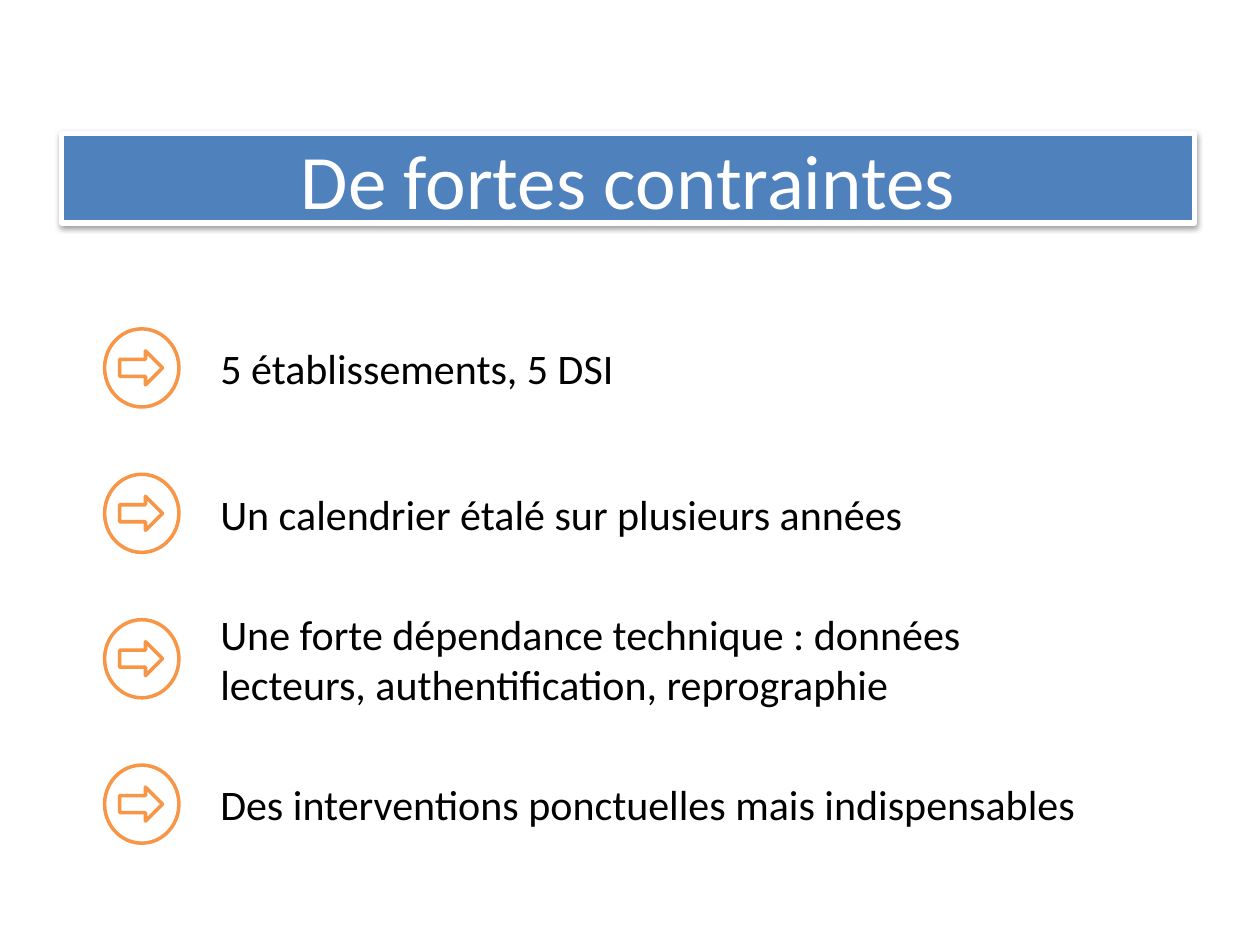
import pptx
import pptx.util
import pptx.dml.color
import pptx.enum.shapes
import pptx.enum.text
import pptx.oxml
import pptx.oxml.ns

COLORS = {"banner": "4F81BD", "accent": "F79646", "paper": "FFFFFF", "ink": "000000"}
SHAPES = pptx.enum.shapes.MSO_SHAPE
ALIGN = pptx.enum.text.PP_ALIGN

deck = pptx.Presentation()
deck.slide_width = pptx.util.Inches(10)
deck.slide_height = pptx.util.Inches(7.5)
slide = deck.slides.add_slide(deck.slide_layouts[6])

# Grid of 100 columns by 75 rows
COLUMN = deck.slide_width / 100
ROW = deck.slide_height / 75


def cells(left, top, width, height):
    return [round(n * unit) for n, unit in
            zip((left, top, width, height), (COLUMN, ROW, COLUMN, ROW))]


def write(part, text, size, color, align, wrap=True):
    frame = part.text_frame
    frame.word_wrap = wrap
    frame.vertical_anchor = pptx.enum.text.MSO_ANCHOR.MIDDLE
    paragraph = frame.paragraphs[0]
    paragraph.alignment = align
    run = paragraph.add_run()
    run.text = text
    for name, value in {"name": "Calibri", "size": pptx.util.Pt(size)}.items():
        setattr(run.font, name, value)
    run.font.color.rgb = pptx.dml.color.RGBColor.from_string(COLORS[color])


# Title banner with a soft shadow below
banner = slide.shapes.add_shape(SHAPES.RECTANGLE, *cells(4.9, 10.6, 89.9, 7.1))
banner.fill.solid()
banner.fill.fore_color.rgb = pptx.dml.color.RGBColor.from_string(COLORS["banner"])
banner.line.color.rgb = pptx.dml.color.RGBColor.from_string(COLORS["paper"])
banner.line.width = pptx.util.Pt(3)
banner._element.spPr.append(pptx.oxml.parse_xml(
    f'<a:effectLst {pptx.oxml.ns.nsdecls("a")}>'
    '<a:outerShdw blurRad="40000" dist="20000" dir="5400000" rotWithShape="0">'
    '<a:srgbClr val="000000"><a:alpha val="38000"/></a:srgbClr>'
    '</a:outerShdw></a:effectLst>'))
write(banner, "De fortes contraintes", 44, "paper", ALIGN.CENTER)

# Constraints: text, text width, text height, wrap
constraints = [
    ("5 établissements, 5 DSI", 33.5, 5, False),
    ("Un calendrier étalé sur plusieurs années", 74, 5, True),
    ("Une forte dépendance technique : données lecteurs, authentification, reprographie",
     72.1, 9.1, True),
    ("Des interventions ponctuelles mais indispensables", 72.1, 5, True),
]
FIRST_MIDDLE, PITCH = 29.2, 11.54

for index, (text, width, height, wrap) in enumerate(constraints):
    middle = FIRST_MIDDLE + index * PITCH

    # Circled arrow
    marker = slide.shapes.add_group_shape()
    for preset, left, mark_width, mark_height in (
            (SHAPES.FLOWCHART_CONNECTOR, 8.3, 5.9, 6.2),
            (SHAPES.RIGHT_ARROW, 9.5, 3.4, 2.7)):
        mark = marker.shapes.add_shape(
            preset, *cells(left, middle - mark_height / 2, mark_width, mark_height))
        mark.shadow.inherit = False
        mark.fill.solid()
        mark.fill.fore_color.rgb = pptx.dml.color.RGBColor.from_string(COLORS["paper"])
        mark.line.color.rgb = pptx.dml.color.RGBColor.from_string(COLORS["accent"])
        mark.line.width = pptx.util.Pt(2)

    # Constraint text, centred on its marker
    constraint = slide.shapes.add_textbox(*cells(16.5, middle - height / 2, width, height))
    write(constraint, text, 24, "ink", ALIGN.LEFT, wrap)

deck.save("out.pptx")
